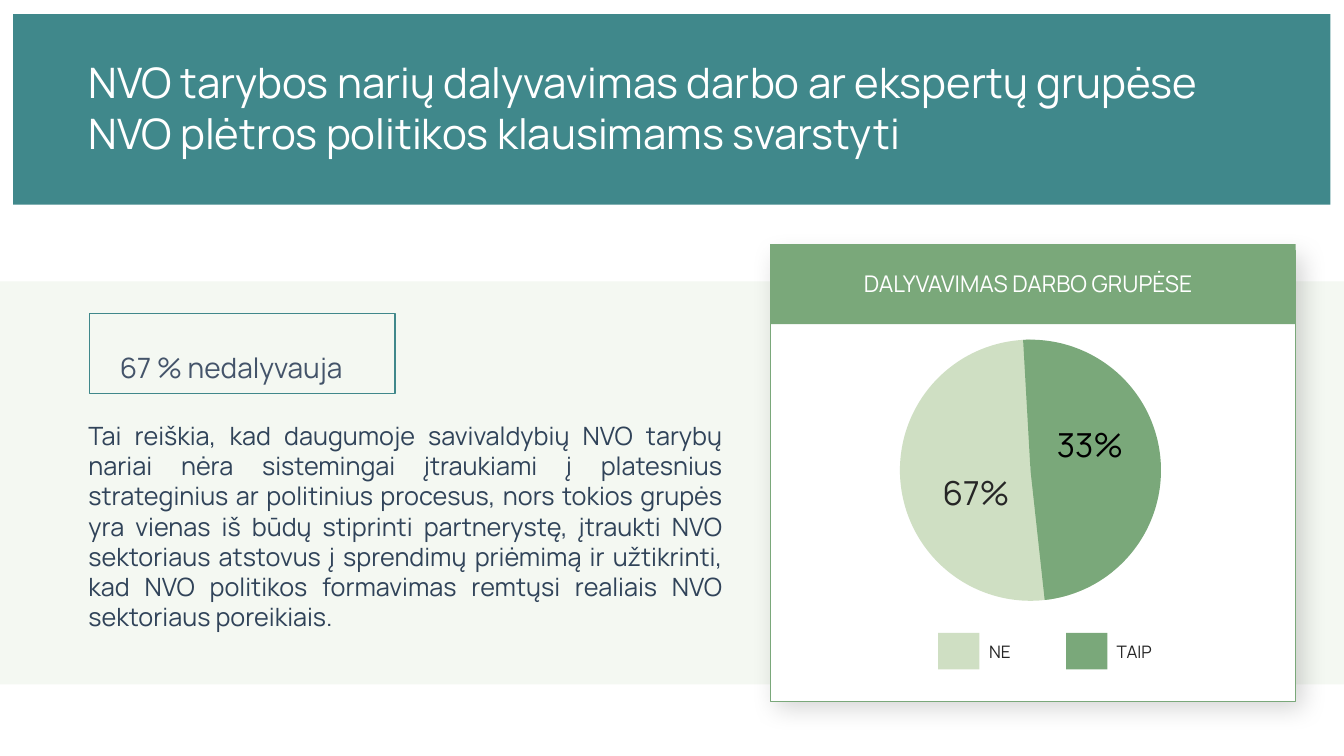
from lxml import etree
from pptx import Presentation
from pptx.dml.color import RGBColor
from pptx.enum import shapes, text
from pptx.oxml import ns
from pptx.util import Cm, Pt

# Content
TITLE = ("NVO tarybos narių dalyvavimas darbo ar ekspertų grupėse "
         "NVO plėtros politikos klausimams svarstyti")
FINDING = "67 % nedalyvauja"
EXPLANATION = (
    "Tai reiškia, kad daugumoje savivaldybių NVO tarybų nariai nėra sistemingai "
    "įtraukiami į platesnius strateginius ar politinius procesus, nors tokios grupės "
    "yra vienas iš būdų stiprinti partnerystę, įtraukti NVO sektoriaus atstovus į "
    "sprendimų priėmimą ir užtikrinti, kad NVO politikos formavimas remtųsi realiais "
    "NVO sektoriaus poreikiais.")
CARD_TITLE = "DALYVAVIMAS DARBO GRUPĖSE"

# Colours and font
WHITE = RGBColor(0xFF, 0xFF, 0xFF)
BLACK = RGBColor(0, 0, 0)
TEAL = RGBColor(0x40, 0x88, 0x8B)
GREEN = RGBColor(0x7A, 0xA8, 0x7A)
LIGHT_GREEN = RGBColor(0xCF, 0xDF, 0xC3)
PALE = RGBColor(0xF4, 0xF8, 0xF2)
NAVY = RGBColor(0x30, 0x43, 0x59)
SLATE = RGBColor(0x44, 0x54, 0x6A)
CHARCOAL = RGBColor(0x26, 0x26, 0x26)
FONT = "Manrope"

# Answer, share, colour, start and end angle, share box, share colour, legend label width
ANSWERS = [
    ("NE", "67%", LIGHT_GREEN, 51.52, 270, (22.81, 11.71, 3.58, 1.42), CHARCOAL, 1.04),
    ("TAIP", "33%", GREEN, 266.77, 83.74, (25.78, 10.49, 3.38, 1.42), BLACK, 1.35),
]

SLIDE_W, SLIDE_H = 33.87, 19.05
CARD_LEFT, CARD_W = 19.41, 13.24
PIE_LEFT, PIE_TOP, PIE_SIZE = 22.68, 8.56, 6.58
KEY_LEFT, KEY_TOP, KEY_W, KEY_H, KEY_STEP = 23.64, 15.95, 1.04, 0.92, 3.23

prs = Presentation()
prs.slide_width, prs.slide_height = Cm(SLIDE_W), Cm(SLIDE_H)
slide = prs.slides.add_slide(prs.slide_layouts[6])


def add_block(box, fill=None, line=None, width=1, kind=shapes.MSO_SHAPE.RECTANGLE):
    block = slide.shapes.add_shape(kind, *map(Cm, box))
    block.shadow.inherit = False
    if fill is None:
        block.fill.background()
    else:
        block.fill.solid()
        block.fill.fore_color.rgb = fill
    if line is None:
        block.line.fill.background()
    else:
        block.line.color.rgb = line
        block.line.width = Pt(width)
    return block


def add_words(box, words, size, color, align=text.PP_ALIGN.LEFT, wrap=True,
              margins=(0.25, 0.13), spacing=None):
    frame = slide.shapes.add_textbox(*map(Cm, box)).text_frame
    frame.word_wrap = wrap
    frame.margin_left = frame.margin_right = Cm(margins[0])
    frame.margin_top = frame.margin_bottom = Cm(margins[1])
    frame.text = words
    paragraph = frame.paragraphs[0]
    paragraph.alignment = align
    if spacing:
        paragraph.line_spacing = spacing
    font = paragraph.runs[0].font
    font.name, font.size, font.color.rgb = FONT, Pt(size), color


def add_label(box, words, size, color, margins=(0.2, 0.1)):
    add_words(box, words, size, color, text.PP_ALIGN.CENTER, False, margins)


def cast_shadow(block, blur, distance, angle, opacity):
    effects = block.element.spPr.find(ns.qn("a:effectLst"))
    shadow = etree.SubElement(
        effects, ns.qn("a:outerShdw"), blurRad=str(Pt(blur)), dist=str(Pt(distance)),
        dir=str(angle * 60000), algn="tl", rotWithShape="0")
    tint = etree.SubElement(shadow, ns.qn("a:srgbClr"), val=str(BLACK))
    etree.SubElement(tint, ns.qn("a:alpha"), val=str(opacity * 1000))


# Pale band with the finding
add_block((0, 7.09, SLIDE_W, 10.16), PALE)
add_words((1.98, 10.46, 16.48, 7.26), EXPLANATION, 18, NAVY, text.PP_ALIGN.JUSTIFY)
add_words((2.77, 8.36, 8.71, 1.12), FINDING, 20, SLATE, spacing=1.41)
add_block((2.26, 7.9, 7.7, 2.01), line=TEAL)

# Title banner
add_block((0.33, 0.36, 33.2, 4.8), TEAL)
add_words((1.98, 1.3, 30.68, 2.82), TITLE, 30, WHITE)

# Card
card = add_block((CARD_LEFT, 6.32, CARD_W, 11.35), WHITE, GREEN, 0.75)
cast_shadow(card, 18, 6, 45, 16)
add_block((CARD_LEFT, 6.15, CARD_W, 2.02), GREEN)
add_label((20.5, 6.68, 10.82, 0.91), CARD_TITLE, 16.4, WHITE)

# Pie slices with shares and legend
for i, (answer, share, color, start, end, share_box, share_color, label_w) in enumerate(ANSWERS):
    piece = add_block((PIE_LEFT, PIE_TOP, PIE_SIZE, PIE_SIZE), color,
                      kind=shapes.MSO_SHAPE.PIE)
    # An angle adjustment counts 60000 units per degree, in steps of 100000
    piece.adjustments[0], piece.adjustments[1] = start * 0.6, end * 0.6
    add_label(share_box, share, 23.6, share_color, (0.4, 0.2))

    key_left = KEY_LEFT + i * KEY_STEP
    add_block((key_left, KEY_TOP, KEY_W, KEY_H), color)
    add_label((key_left + KEY_W, KEY_TOP + 0.1, label_w, 0.74), answer, 12.3, CHARCOAL)

prs.save("out.pptx")
